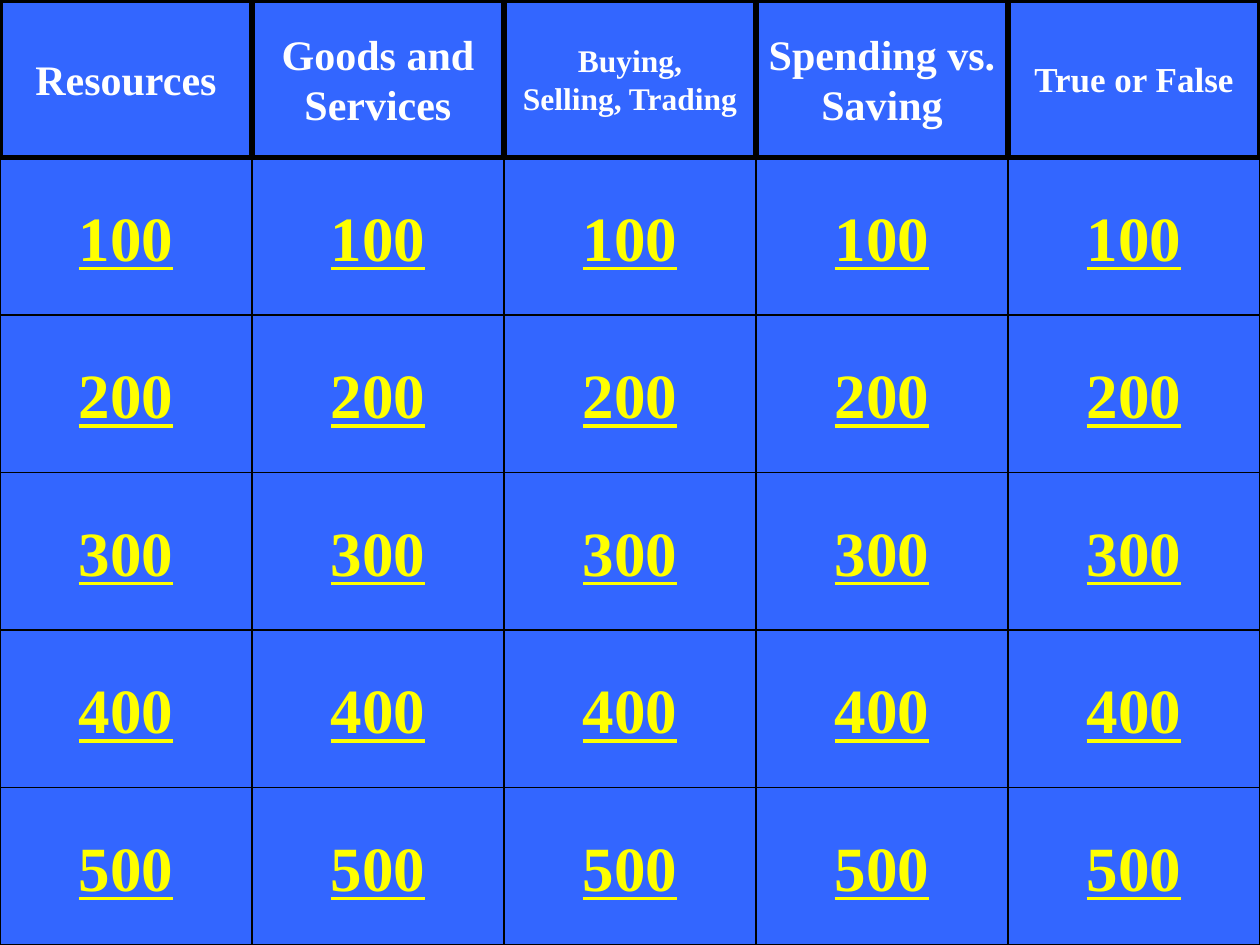
from dataclasses import dataclass

from pptx import Presentation
from pptx.dml.color import RGBColor
from pptx.enum.shapes import MSO_SHAPE
from pptx.enum.text import MSO_ANCHOR, PP_ALIGN
from pptx.util import Pt


@dataclass(frozen=True)
class Theme:
    font: str = "Times New Roman"
    board: RGBColor = RGBColor(0x33, 0x66, 0xFF)
    border: RGBColor = RGBColor(0, 0, 0)
    heading: RGBColor = RGBColor(0xFF, 0xFF, 0xFF)
    points: RGBColor = RGBColor(0xFF, 0xFF, 0)
    points_size: int = 36
    large: int = 24
    medium: int = 20
    small: int = 18


T = Theme()
COL_W, ROW_H = 144, 90
CATEGORIES = [
    ("Resources", T.large),
    ("Goods and\nServices", T.large),
    ("Buying,\nSelling, Trading", T.small),
    ("Spending vs.\nSaving", T.large),
    ("True or False", T.medium),
]
POINTS = [100, 200, 300, 400, 500]

prs = Presentation()
prs.slide_width, prs.slide_height = Pt(720), Pt(540)
s = prs.slides.add_slide(prs.slide_layouts[6])
s.background.fill.solid()
s.background.fill.fore_color.rgb = T.board


def add_cell(kind, col, row, text, size, color, border, underline=None):
    sp = s.shapes.add_shape(kind, Pt(col * COL_W), Pt(row * ROW_H), Pt(COL_W), Pt(ROW_H))
    sp.shadow.inherit = False
    sp.fill.solid()
    sp.fill.fore_color.rgb = T.board
    sp.line.color.rgb = T.border
    sp.line.width = Pt(border)
    tf = sp.text_frame
    tf.word_wrap = False
    tf.vertical_anchor = MSO_ANCHOR.MIDDLE
    tf.text = text
    for p in tf.paragraphs:
        p.alignment = PP_ALIGN.CENTER
        for r in p.runs:
            r.font.name, r.font.size = T.font, Pt(size)
            r.font.bold, r.font.underline = True, underline
            r.font.color.rgb = color


for col in range(len(CATEGORIES)):
    for row, value in enumerate(POINTS, start=1):
        add_cell(MSO_SHAPE.ACTION_BUTTON_CUSTOM, col, row, str(value),
                 T.points_size, T.points, 0.75, underline=True)

# Headings come last so their thick borders lie over the buttons
for col, (title, size) in enumerate(CATEGORIES):
    add_cell(MSO_SHAPE.RECTANGLE, col, 0, title, size, T.heading, 3)

prs.save("out.pptx")
